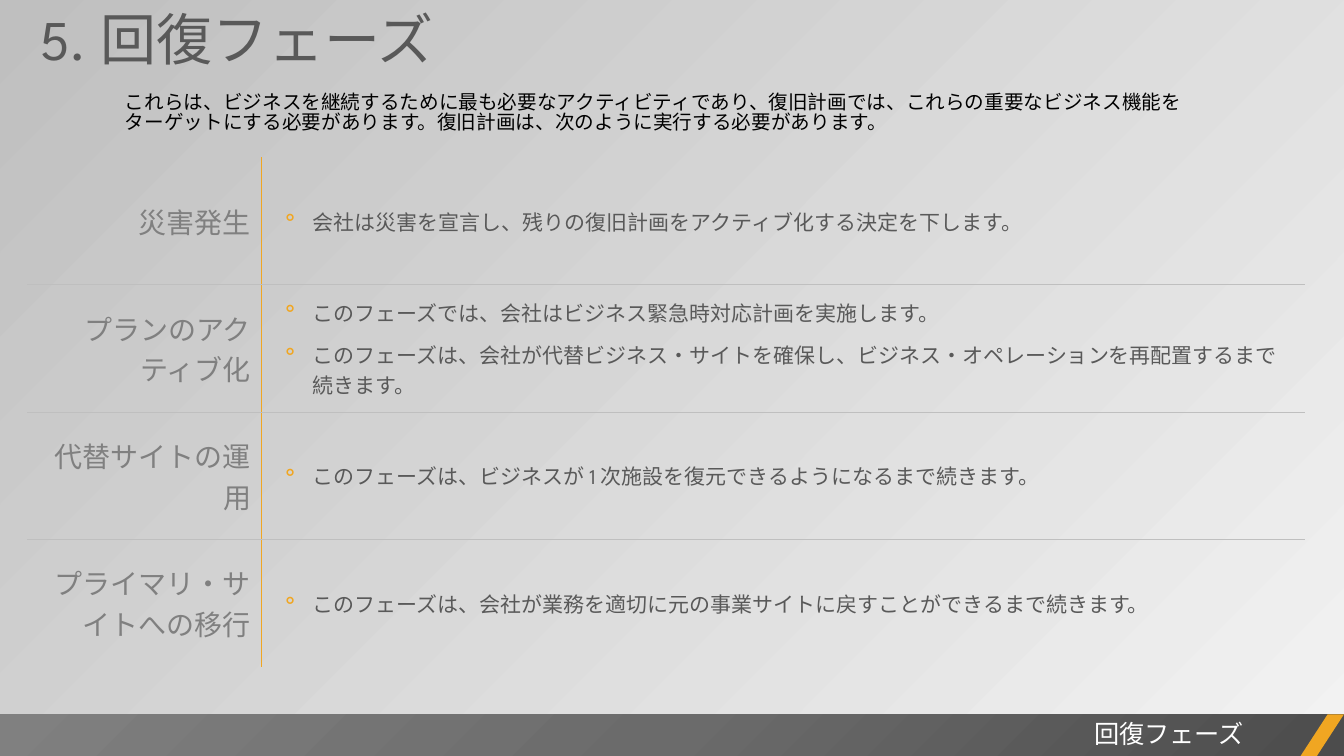
from dataclasses import dataclass

import pptx
import pptx.dml.color
import pptx.enum.shapes
import pptx.enum.text
import pptx.oxml
import pptx.oxml.ns
import pptx.util
from lxml import etree

Cm = pptx.util.Cm
Pt = pptx.util.Pt
RGB = pptx.dml.color.RGBColor.from_string
qn = pptx.oxml.ns.qn
Align = pptx.enum.text.PP_ALIGN
Shape = pptx.enum.shapes.MSO_SHAPE


@dataclass(frozen=True)
class Theme:
    font: str = "League Spartan"
    dark: str = "595959"
    label: str = "808080"
    rule: str = "BFBFBF"
    accent: str = "F0A622"
    black: str = "000000"
    white: str = "FFFFFF"
    backdrop: tuple = ("F2F2F2", "BFBFBF")
    bar: tuple = ("4C4C4C", "6B6B6B", "808080")
    title_size: float = 40
    label_size: float = 20
    footer_size: float = 18
    item_size: float = 15
    intro_size: float = 14


THEME = Theme()
SLIDE_WIDTH, SLIDE_HEIGHT = 33.87, 19.05
BAR_TOP, BAR_HEIGHT = 18, 1.06
ROW_HEIGHT = 3.21
COLUMN_WIDTHS = (5.89, 26.31)

INTRO = ("これらは、ビジネスを継続するために最も必要なアクティビティであり、"
         "復旧計画では、これらの重要なビジネス機能をターゲットにする必要があります。"
         "復旧計画は、次のように実行する必要があります。")
PHASES = [
    ("災害発生",
     ["会社は災害を宣言し、残りの復旧計画をアクティブ化する決定を下します。"]),
    ("プランのアクティブ化",
     ["このフェーズでは、会社はビジネス緊急時対応計画を実施します。",
      "このフェーズは、会社が代替ビジネス・サイトを確保し、"
      "ビジネス・オペレーションを再配置するまで続きます。"]),
    ("代替サイトの運用",
     ["このフェーズは、ビジネスが 1 次施設を復元できるようになるまで続きます。"]),
    ("プライマリ・サイトへの移行",
     ["このフェーズは、会社が業務を適切に元の事業サイトに戻すことができるまで続きます。"]),
]


def write(para, text, *, size, color, align=Align.LEFT, spacing=None, before=0):
    para.alignment = align
    para.space_before = Pt(before)
    if spacing:
        para.line_spacing = spacing
    span = para.add_run()
    span.text = text
    span.font.name = THEME.font
    span.font.size = Pt(size)
    span.font.color.rgb = RGB(color)


def add_text_box(slide, left, top, width, height, text, **style):
    box = slide.shapes.add_textbox(Cm(left), Cm(top), Cm(width), Cm(height))
    box.text_frame.word_wrap = True
    write(box.text_frame.paragraphs[0], text, **style)


def add_plain_shape(slide, kind, left, width):
    """Add a shape without line or shadow at the height of the footer bar."""
    shape = slide.shapes.add_shape(
        kind, Cm(left), Cm(BAR_TOP), Cm(width), Cm(BAR_HEIGHT))
    shape.shadow.inherit = False
    shape.line.fill.background()
    return shape


def paint_backdrop(slide):
    fill = slide.background.fill
    fill.gradient()
    fill.gradient_angle = 135
    for stop, color in zip(fill.gradient_stops, THEME.backdrop):
        stop.color.rgb = RGB(color)


def fill_from_corner(shape, colors):
    """Fill with a radial gradient that starts at the bottom right corner."""
    stops = "".join(
        f'<a:gs pos="{100000 * i // (len(colors) - 1)}"><a:srgbClr val="{color}"/></a:gs>'
        for i, color in enumerate(colors))
    gradient = pptx.oxml.parse_xml(
        f'<a:gradFill {pptx.oxml.ns.nsdecls("a")} rotWithShape="1">'
        f'<a:gsLst>{stops}</a:gsLst>'
        '<a:path path="circle"><a:fillToRect l="100000" t="100000"/></a:path>'
        '</a:gradFill>')
    shape.element.spPr.find(qn("a:prstGeom")).addnext(gradient)


def add_footer(slide):
    bar = add_plain_shape(slide, Shape.RECTANGLE, 0, SLIDE_WIDTH)
    fill_from_corner(bar, THEME.bar)
    slash = add_plain_shape(slide, Shape.PARALLELOGRAM, 32.77, 1.1)
    slash.adjustments[0] = 0.65
    slash.fill.solid()
    slash.fill.fore_color.rgb = RGB(THEME.accent)
    add_text_box(slide, 13.34, 17.98, 18.26, 1.02, "回復フェーズ",
                 size=THEME.footer_size, color=THEME.white, align=Align.RIGHT)


def add_bullet(para):
    properties = para._p.get_or_add_pPr()
    properties.set("marL", str(Cm(0.79)))
    properties.set("indent", str(-Cm(0.79)))
    color = etree.SubElement(properties, qn("a:buClr"))
    etree.SubElement(color, qn("a:srgbClr"), val=THEME.accent)
    etree.SubElement(properties, qn("a:buChar"), char="⚬")


def set_borders(cell, **borders):
    """Draw the sides L, R, T, B given as (color, points); clear the others."""
    properties = cell._tc.get_or_add_tcPr()
    for index, side in enumerate("LRTB"):
        color, points = borders.get(side) or (None, 0)
        line = etree.Element(qn(f"a:ln{side}"), w=str(Pt(points)))
        if color:
            paint = etree.SubElement(line, qn("a:solidFill"))
            etree.SubElement(paint, qn("a:srgbClr"), val=color)
        else:
            etree.SubElement(line, qn("a:noFill"))
        properties.insert(index, line)


def add_phase_table(slide):
    frame = slide.shapes.add_table(
        len(PHASES), len(COLUMN_WIDTHS), Cm(0.69), Cm(3.96),
        Cm(sum(COLUMN_WIDTHS)), Cm(ROW_HEIGHT * len(PHASES)))
    table = frame.table
    table.first_row = table.horz_banding = False
    for column, width in zip(table.columns, COLUMN_WIDTHS):
        column.width = Cm(width)

    divider, rule = (THEME.accent, 1), (THEME.rule, 0.5)
    last = len(PHASES) - 1
    for index, (phase, items) in enumerate(PHASES):
        table.rows[index].height = Cm(ROW_HEIGHT)
        label, detail = table.cell(index, 0), table.cell(index, 1)
        for cell, side in ((label, "R"), (detail, "L")):
            cell.vertical_anchor = pptx.enum.text.MSO_ANCHOR.MIDDLE
            cell.fill.background()
            set_borders(cell, **{side: divider},
                        T=rule if index > 0 else None,
                        B=rule if index < last else None)
        write(label.text_frame.paragraphs[0], phase,
              size=THEME.label_size, color=THEME.label, align=Align.RIGHT)
        detail.margin_left = Cm(0.51)
        for number, item in enumerate(items):
            text = detail.text_frame
            para = text.add_paragraph() if number else text.paragraphs[0]
            write(para, item, size=THEME.item_size, color=THEME.dark,
                  before=8.5 if number else 0)
            add_bullet(para)


def main():
    deck = pptx.Presentation()
    deck.slide_width, deck.slide_height = Cm(SLIDE_WIDTH), Cm(SLIDE_HEIGHT)
    slide = deck.slides.add_slide(deck.slide_layouts[6])
    paint_backdrop(slide)
    add_footer(slide)
    add_text_box(slide, 0.76, 0.25, 31.62, 1.96, "5. 回復フェーズ",
                 size=THEME.title_size, color=THEME.dark, spacing=0.85)
    add_phase_table(slide)
    add_text_box(slide, 2.9, 2.24, 27.36, 1.45, INTRO,
                 size=THEME.intro_size, color=THEME.black, spacing=0.85)
    deck.save("out.pptx")


if __name__ == "__main__":
    main()
